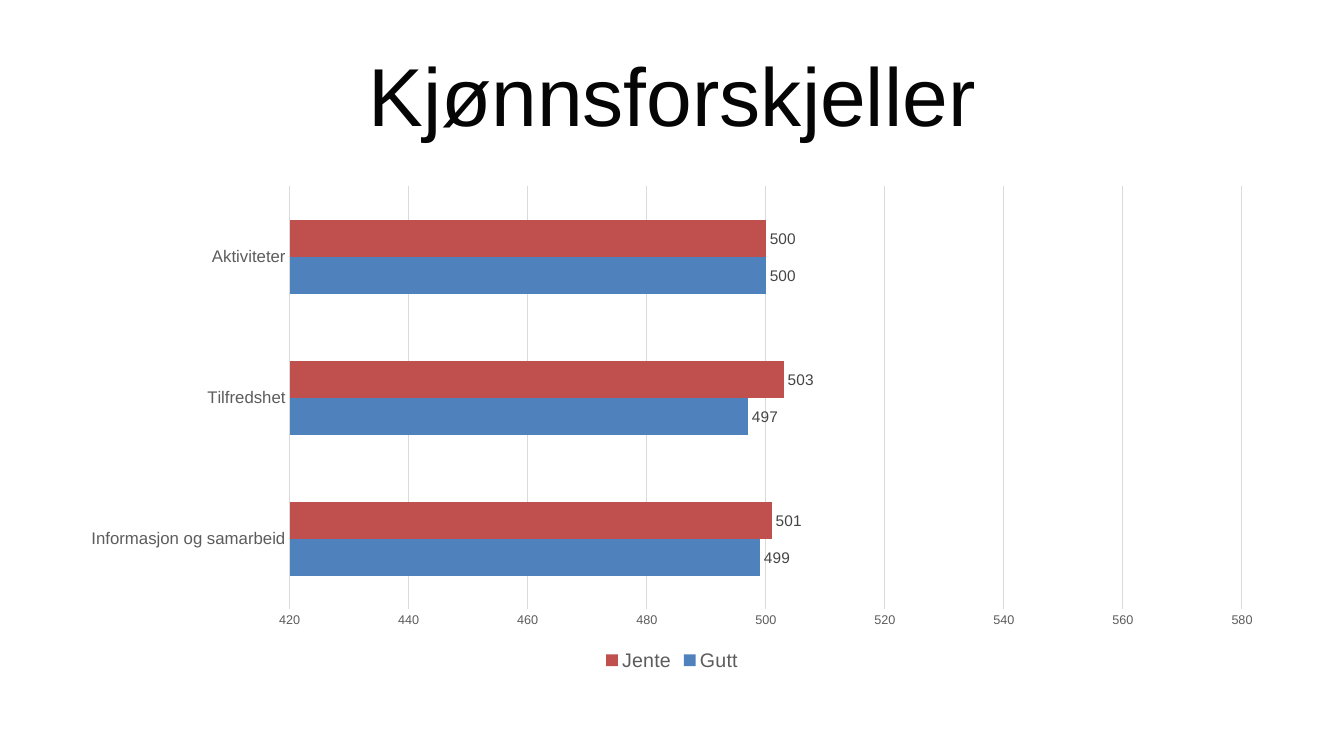
from dataclasses import dataclass

from pptx import Presentation
from pptx.chart.data import CategoryChartData
from pptx.dml.color import RGBColor
from pptx.enum.chart import (XL_CHART_TYPE, XL_LABEL_POSITION,
                             XL_LEGEND_POSITION, XL_TICK_MARK)
from pptx.enum.text import MSO_ANCHOR, PP_ALIGN
from pptx.util import Inches, Pt

BAR = XL_CHART_TYPE.BAR_CLUSTERED
BOTTOM = XL_LEGEND_POSITION.BOTTOM
OUTSIDE = XL_LABEL_POSITION.OUTSIDE_END
NO_TICK = XL_TICK_MARK.NONE
MIDDLE = MSO_ANCHOR.MIDDLE
CENTER = PP_ALIGN.CENTER

WIDTH, HEIGHT = Inches(13.33), Inches(7.5)
COL, ROW = WIDTH / 20, HEIGHT / 30
FONT = "Arial"
COLORS = {"ink": "050505", "axis": "5C5C5C", "label": "444444",
          "grid": "DADADA", "blue": "4F81BD", "red": "C0504D"}
TOPICS = ["Informasjon og samarbeid", "Tilfredshet", "Aktiviteter"]


@dataclass
class Group:
    name: str
    scores: list[int]
    color: str


@dataclass
class Area:
    """A rectangle in grid columns and rows."""
    col: float
    row: float
    cols: float
    rows: float

    def box(self) -> tuple[int, ...]:
        return (int(self.col * COL), int(self.row * ROW),
                int(self.cols * COL), int(self.rows * ROW))


GROUPS = [Group("Gutt", [499, 497, 500], "blue"),
          Group("Jente", [501, 503, 500], "red")]


def tint(name: str) -> RGBColor:
    return RGBColor.from_string(COLORS[name])


def style(font, size: float, color: str) -> None:
    font.name, font.size, font.bold = FONT, Pt(size), False
    font.color.rgb = tint(color)


def rule(line) -> None:
    line.color.rgb = tint("grid")
    line.width = Pt(0.75)


def add_text(slide, area: Area, text: str, *, size: float, color: str,
             align=CENTER, anchor=MIDDLE) -> None:
    frame = slide.shapes.add_textbox(*area.box()).text_frame
    frame.word_wrap = True
    frame.vertical_anchor = anchor
    para = frame.paragraphs[0]
    para.alignment = align
    run = para.add_run()
    run.text = text
    style(run.font, size, color)


def style_axes(chart) -> None:
    topics, scores = chart.category_axis, chart.value_axis
    for axis, size in ((topics, 12), (scores, 9)):
        axis.major_tick_mark = axis.minor_tick_mark = NO_TICK
        style(axis.tick_labels.font, size, "axis")
    rule(topics.format.line)
    scores.format.line.fill.background()
    scores.minimum_scale, scores.maximum_scale = 420, 580
    scores.major_unit = 20
    scores.has_major_gridlines = True
    rule(scores.major_gridlines.format.line)
    scores.tick_labels.number_format = "0"
    scores.tick_labels.number_format_is_linked = False


def style_bars(plot, groups: list[Group]) -> None:
    plot.gap_width, plot.overlap = 182, 0
    plot.vary_by_categories = False
    for bars, group in zip(plot.series, groups):
        bars.invert_if_negative = False
        bars.format.fill.solid()
        bars.format.fill.fore_color.rgb = tint(group.color)
        labels = bars.data_labels
        labels.show_value = True
        labels.position = OUTSIDE
        labels.number_format = "0"
        labels.number_format_is_linked = False
        style(labels.font, 11, "label")


def add_bars(slide, area: Area, groups: list[Group]) -> None:
    data = CategoryChartData(number_format="0")
    data.categories = TOPICS
    for group in groups:
        data.add_series(group.name, group.scores)
    chart = slide.shapes.add_chart(BAR, *area.box(), data).chart
    style(chart.font, 10, "ink")
    chart.has_title = False
    chart.has_legend = True
    chart.legend.position = BOTTOM
    chart.legend.include_in_layout = False
    style(chart.legend.font, 14, "axis")
    style_axes(chart)
    style_bars(chart.plots[0], groups)


def main() -> None:
    deck = Presentation()
    deck.slide_width, deck.slide_height = WIDTH, HEIGHT
    slide = deck.slides.add_slide(deck.slide_layouts[6])
    add_text(slide, Area(1, 1.2, 18, 5), "Kjønnsforskjeller",
             size=58.7, color="ink")
    add_bars(slide, Area(1, 7, 18, 19.8), GROUPS)
    deck.save("out.pptx")


if __name__ == "__main__":
    main()
